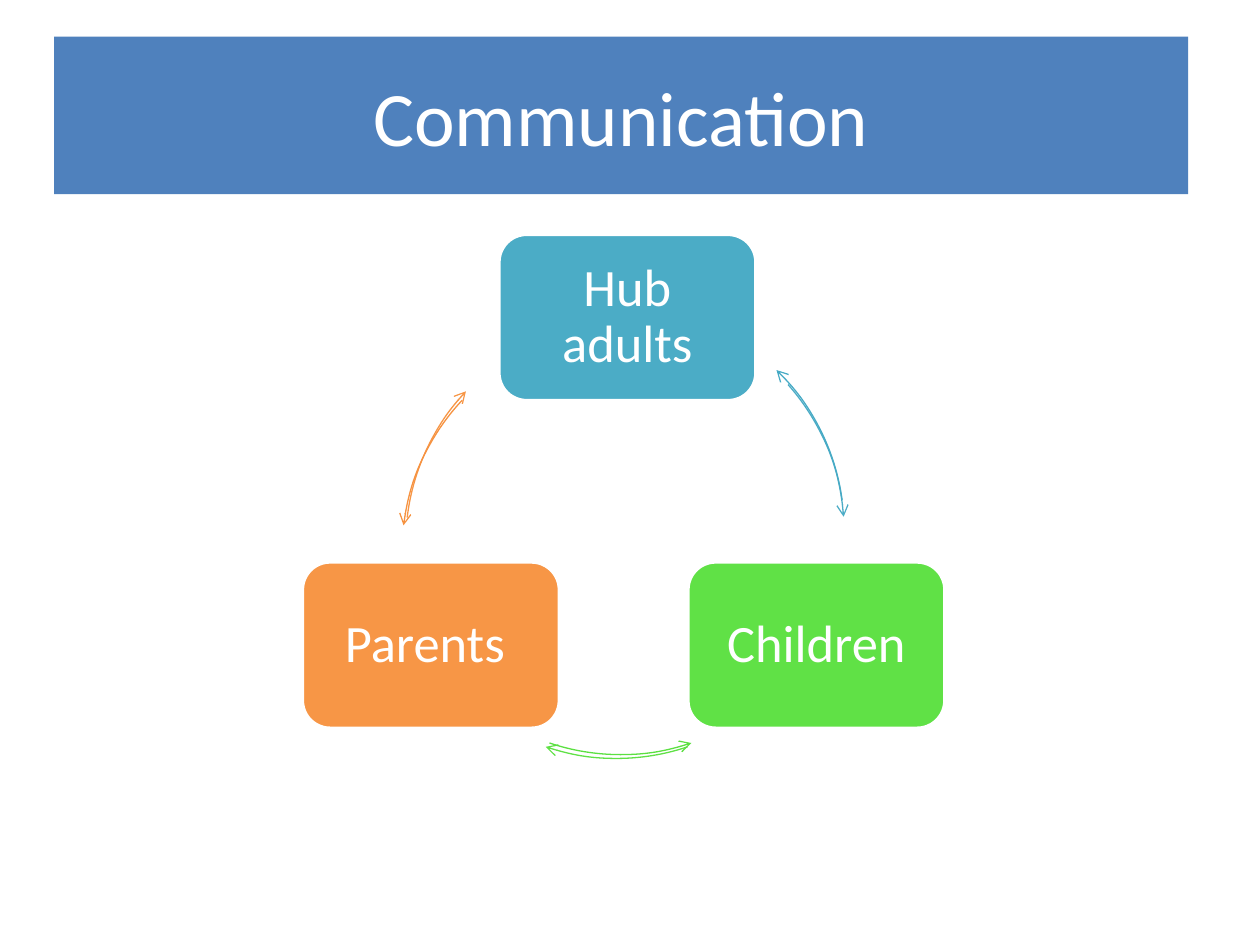
from lxml import etree
from pptx import Presentation
from pptx.dml.color import RGBColor
from pptx.enum.shapes import MSO_SHAPE
from pptx.enum.text import MSO_ANCHOR, PP_ALIGN
from pptx.oxml.ns import qn
from pptx.util import Inches, Pt

RECTANGLE = MSO_SHAPE.RECTANGLE
ROUNDED = MSO_SHAPE.ROUNDED_RECTANGLE
ARC = MSO_SHAPE.ARC
CENTER = PP_ALIGN.CENTER
MIDDLE = MSO_ANCHOR.MIDDLE

COLUMNS, ROWS = 100, 75
BOX_WIDTH, BOX_HEIGHT = 20.4, 13.2
CIRCLE = 35.3
ARC_DEGREE = 0.6


def color(value):
    return RGBColor.from_string(value)


class SlideBuilder:
    font = "Calibri"
    white = "FFFFFF"

    def __init__(self, presentation):
        self.column = presentation.slide_width / COLUMNS
        self.row = presentation.slide_height / ROWS
        self.slide = presentation.slides.add_slide(presentation.slide_layouts[6])

    def shape(self, kind, left, top, width, height):
        shape = self.slide.shapes.add_shape(
            kind,
            round(left * self.column),
            round(top * self.row),
            round(width * self.column),
            round(height * self.row),
        )
        shape.shadow.inherit = False
        return shape

    def text(self, shape, words, size, inset, spacing):
        frame = shape.text_frame
        frame.word_wrap = True
        frame.vertical_anchor = MIDDLE
        frame.margin_left = frame.margin_right = Inches(inset)
        frame.margin_top = frame.margin_bottom = Inches(inset)
        paragraph = frame.paragraphs[0]
        paragraph.alignment = CENTER
        paragraph.line_spacing = spacing
        run = paragraph.add_run()
        run.text = words
        run.font.name = self.font
        run.font.size = Pt(size)
        run.font.color.rgb = color(self.white)

    def title(self, words, left, top, width, height, fill):
        banner = self.shape(RECTANGLE, left, top, width, height)
        banner.fill.solid()
        banner.fill.fore_color.rgb = color(fill)
        banner.line.fill.background()
        self.text(banner, words, 44, 0.1, 1.0)

    def box(self, words, left, top, fill):
        box = self.shape(ROUNDED, left, top, BOX_WIDTH, BOX_HEIGHT)
        box.fill.solid()
        box.fill.fore_color.rgb = color(fill)
        box.line.color.rgb = color(self.white)
        box.line.width = Pt(2)
        self.text(box, words, 30, 0.18, 0.9)

    def arrow(self, left, top, start, end, line, arrow_end):
        arc = self.shape(ARC, left, top, CIRCLE, CIRCLE)
        arc.adjustments[0] = start * ARC_DEGREE
        arc.adjustments[1] = end * ARC_DEGREE
        arc.fill.background()
        arc.line.color.rgb = color(line)
        arc.line.width = Pt(0.75)
        outline = arc.line._get_or_add_ln()
        etree.SubElement(outline, qn(f"a:{arrow_end}"), type="arrow")


def main():
    presentation = Presentation()
    presentation.slide_width = Inches(10)
    presentation.slide_height = Inches(7.5)
    builder = SlideBuilder(presentation)

    builder.title("Communication", 4.3, 2.9, 90, 12.5, "4F81BD")

    for words, left, top, fill in (
        ("Hub adults", 39.6, 18.6, "4BACC6"),
        ("Children", 54.6, 44.6, "60E146"),
        ("Parents ", 24, 44.6, "F79646"),
    ):
        builder.box(words, left, top, fill)

    for left, top, start, end, line, arrow_end in (
        (31.7, 24.6, 318.4, 356, "4BACC6", "tailEnd"),
        (31.3, 24.9, 71.4, 108.6, "60E146", "tailEnd"),
        (32.2, 25.5, 186.7, 223.2, "F79646", "tailEnd"),
        (31.7, 24.4, 314.1, 352.3, "46AAC5", "headEnd"),
        (31.6, 24.6, 71.4, 108.6, "5BE041", "headEnd"),
        (31.9, 26.2, 187, 223.2, "F69240", "headEnd"),
    ):
        builder.arrow(left, top, start, end, line, arrow_end)

    presentation.save("out.pptx")


if __name__ == "__main__":
    main()
